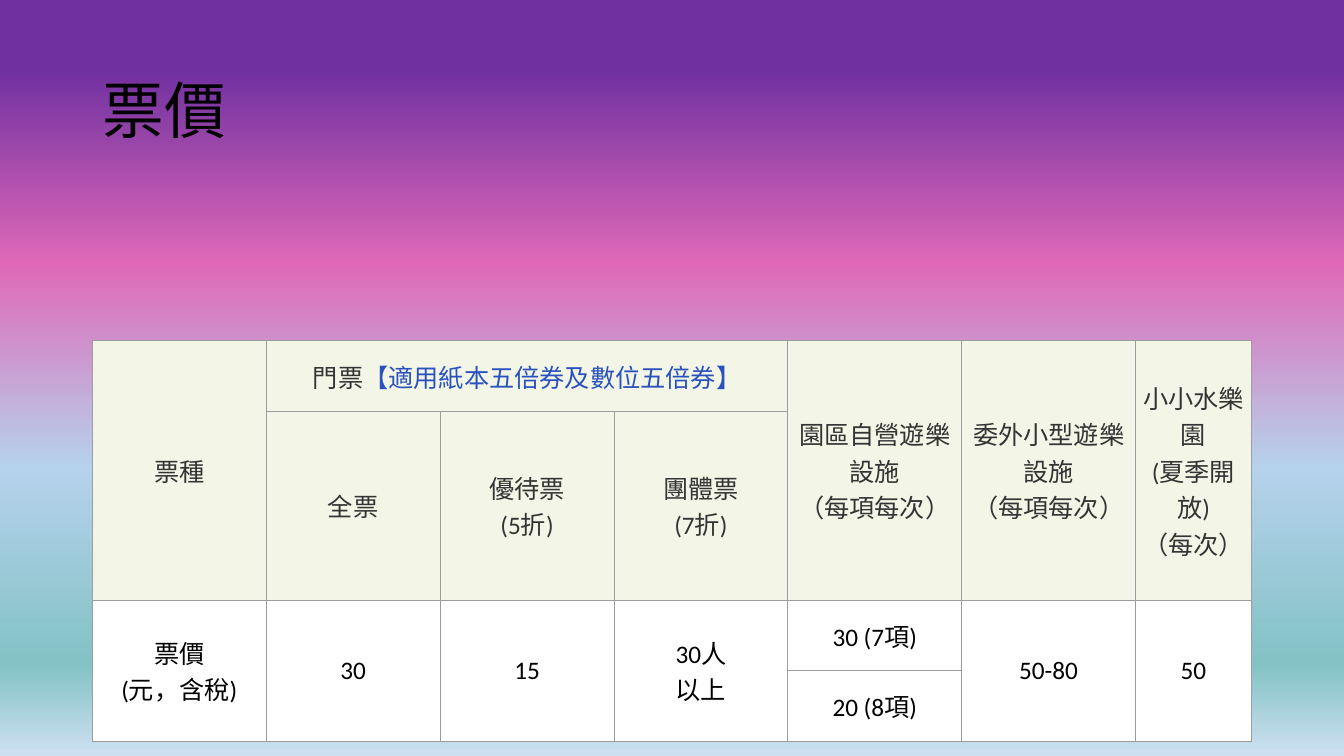
from copy import deepcopy

from lxml.etree import SubElement
from pptx import Presentation
from pptx.dml.color import RGBColor
from pptx.enum.text import MSO_ANCHOR, MSO_AUTO_SIZE, PP_ALIGN
from pptx.oxml.ns import qn
from pptx.util import Pt

BLACK = RGBColor(0x00, 0x00, 0x00)
CHARCOAL = RGBColor(0x34, 0x34, 0x34)
VOUCHER_BLUE = RGBColor(0x2A, 0x52, 0xBE)
HEADER_CREAM = RGBColor(0xF3, 0xF6, 0xE7)
WHITE = RGBColor(0xFF, 0xFF, 0xFF)
BORDER_GREY = RGBColor(0x9C, 0x9C, 0x9C)
SKY_STOPS = [
    (0.09, RGBColor(0x70, 0x30, 0xA0)),
    (0.35, RGBColor(0xDF, 0x69, 0xB8)),
    (0.62, RGBColor(0xB5, 0xD2, 0xEC)),
    (0.88, RGBColor(0x83, 0xC2, 0xC5)),
    (1.0, RGBColor(0xCE, 0xE1, 0xF2)),
]

COLUMN_WIDTHS = [124.2] * 6 + [82.8]
ROW_HEIGHTS = [50.4, 134.4, 50.4, 50.4]
HEADER_ROWS = 2
PRICES = {
    (0, 0): "票種",
    (0, 1): "門票",
    (0, 4): "園區自營遊樂設施\n（每項每次）",
    (0, 5): "委外小型遊樂設施\n（每項每次）",
    (0, 6): "小小水樂園\n(夏季開放)\n（每次）",
    (1, 1): "全票",
    (1, 2): "優待票\n(5折)",
    (1, 3): "團體票\n(7折)",
    (2, 0): "票價\n(元，含稅)",
    (2, 1): "30",
    (2, 2): "15",
    (2, 3): "30人\n以上",
    (2, 4): "30 (7項)",
    (2, 5): "50-80",
    (2, 6): "50",
    (3, 4): "20 (8項)",
}
TALL_CELLS = [(0, 0), (0, 4), (0, 5), (0, 6)] + [(2, c) for c in (0, 1, 2, 3, 5, 6)]


def write(paragraph, text, size=18, color=BLACK, align=PP_ALIGN.CENTER):
    """Append formatted text to a paragraph, with line breaks at newlines."""
    paragraph.alignment = align
    for number, line in enumerate(text.split("\n")):
        if number:
            paragraph.add_line_break()
        run = paragraph.add_run()
        run.text = line
        run.font.name = "Calibri"
        run.font.size = Pt(size)
        run.font.color.rgb = color


def paint_background(slide):
    """Fill the slide with the vertical gradient."""
    fill = slide.background.fill
    fill.gradient()
    fill.gradient_angle = 270
    stop_list = slide.element.find(".//" + qn("a:gsLst"))
    while len(stop_list) < len(SKY_STOPS):
        stop_list.append(deepcopy(stop_list[0]))
    for stop, (position, color) in zip(fill.gradient_stops, SKY_STOPS):
        stop.position = position
        stop.color.rgb = color


def add_title(slide, text):
    """Place and format the title."""
    title = slide.shapes.title
    title.left, title.top, title.width, title.height = Pt(66), Pt(28.8), Pt(828), Pt(104.4)
    frame = title.text_frame
    frame.auto_size = MSO_AUTO_SIZE.NONE
    frame.vertical_anchor = MSO_ANCHOR.MIDDLE
    frame.paragraphs[0].line_spacing = 0.9
    write(frame.paragraphs[0], text, size=44, align=PP_ALIGN.LEFT)


def format_cell(cell, color):
    """Set fill, margins, anchor and borders of a cell."""
    cell.vertical_anchor = MSO_ANCHOR.MIDDLE
    cell.margin_left = cell.margin_right = cell.margin_top = cell.margin_bottom = Pt(2.25)
    properties = cell._tc.get_or_add_tcPr()
    for side in ("a:lnL", "a:lnR", "a:lnT", "a:lnB"):
        border = SubElement(properties, qn(side), w=str(Pt(0.75)))
        solid = SubElement(border, qn("a:solidFill"))
        SubElement(solid, qn("a:srgbClr"), val=str(BORDER_GREY))
    cell.fill.solid()
    cell.fill.fore_color.rgb = color


def add_price_table(slide):
    """Add the ticket price table."""
    table = slide.shapes.add_table(
        len(ROW_HEIGHTS), len(COLUMN_WIDTHS), Pt(66), Pt(243.4),
        Pt(sum(COLUMN_WIDTHS)), Pt(sum(ROW_HEIGHTS)),
    ).table
    table.first_row = table.horz_banding = False
    for column, width in zip(table.columns, COLUMN_WIDTHS):
        column.width = Pt(width)
    for index, (row, height) in enumerate(zip(table.rows, ROW_HEIGHTS)):
        row.height = Pt(height)
        for cell in row.cells:
            format_cell(cell, HEADER_CREAM if index < HEADER_ROWS else WHITE)
    for row, column in TALL_CELLS:
        table.cell(row, column).merge(table.cell(row + 1, column))
    table.cell(0, 1).merge(table.cell(0, 3))
    for (row, column), text in PRICES.items():
        ink = CHARCOAL if row < HEADER_ROWS else BLACK
        write(table.cell(row, column).text_frame.paragraphs[0], text, color=ink)
    admission = table.cell(0, 1).text_frame.paragraphs[0]
    write(admission, "【適用紙本五倍券及數位五倍券】", color=VOUCHER_BLUE)


def main():
    """Build and save the ticket price slide."""
    presentation = Presentation()
    presentation.slide_width, presentation.slide_height = Pt(960), Pt(540)
    slide = presentation.slides.add_slide(presentation.slide_layouts[5])
    paint_background(slide)
    add_title(slide, "票價")
    add_price_table(slide)
    presentation.save("out.pptx")


if __name__ == "__main__":
    main()
